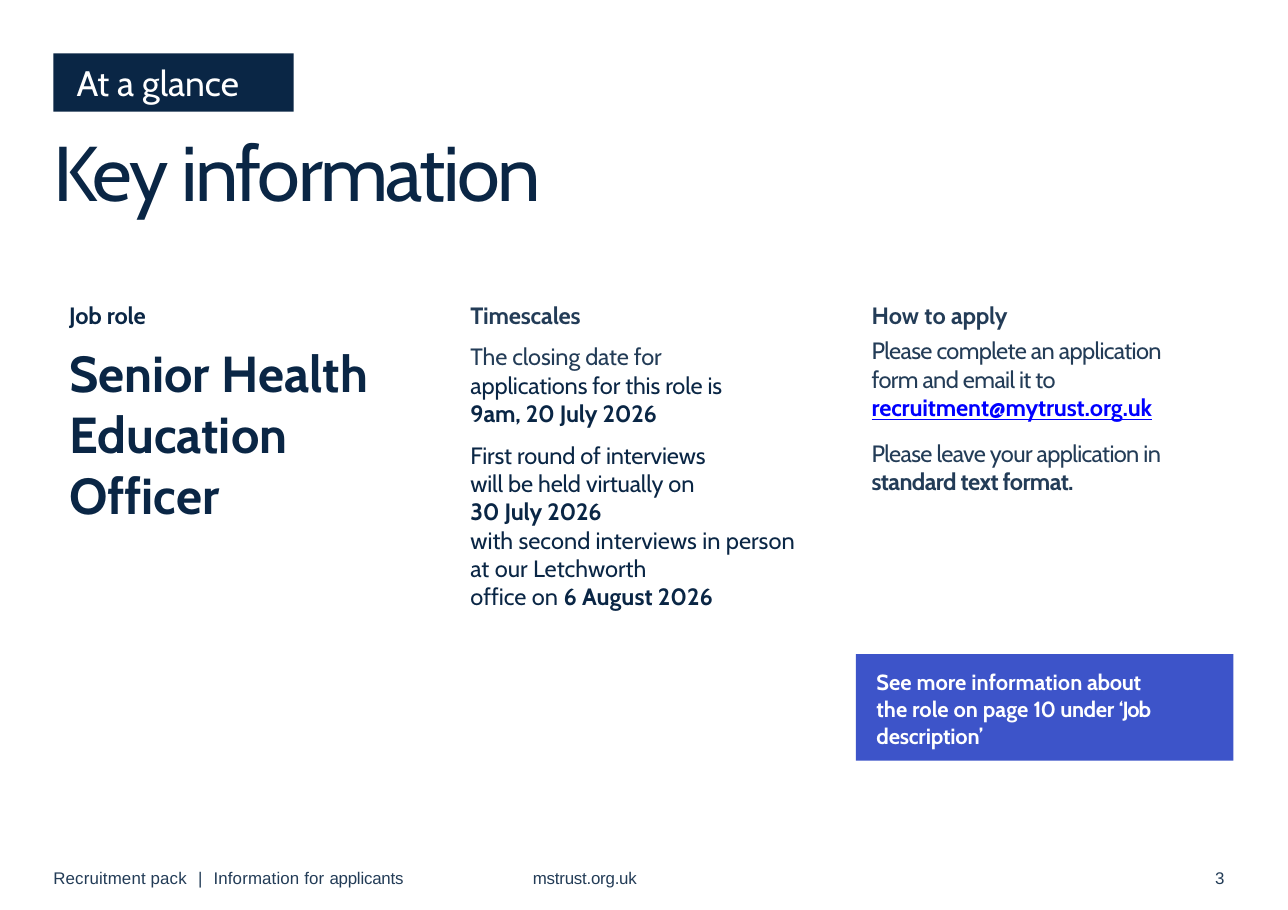
from copy import deepcopy

from pptx import Presentation
from pptx.dml.color import RGBColor
from pptx.enum.shapes import MSO_SHAPE
from pptx.enum.text import MSO_ANCHOR as ANCHOR, PP_ALIGN as ALIGN
from pptx.util import Inches, Pt

NAVY = RGBColor(0x0A, 0x26, 0x45)
SLATE = RGBColor(0x23, 0x3C, 0x57)
BLUE = RGBColor(0x3D, 0x54, 0xC9)
LINK = RGBColor(0x00, 0x00, 0xFF)
WHITE = RGBColor(0xFF, 0xFF, 0xFF)


def write(sp, paragraphs, insets=(0, 0, 0, 0), anchor=ANCHOR.TOP, font="Cabin"):
    """Fill a shape with (space before, line spacing, runs) paragraphs.

    A run is (text, size, colour, bold, character spacing in points).
    Insets run left, top, right, bottom in inches.
    """
    tf = sp.text_frame
    tf.word_wrap = True
    tf.vertical_anchor = anchor
    for side, inset in zip(("left", "top", "right", "bottom"), insets):
        setattr(tf, f"margin_{side}", Inches(inset))
    for n, (before, spacing, runs) in enumerate(paragraphs):
        p = tf.add_paragraph() if n else tf.paragraphs[0]
        p.alignment = ALIGN.LEFT
        p.space_before = Pt(before)
        p.line_spacing = spacing
        for text, size, color, bold, tracking in runs:
            for i, line in enumerate(text.split("\n")):
                if i:
                    p.add_line_break()
                    p._p[-1].append(deepcopy(r._r.rPr))
                r = p.add_run()
                r.text = line
                style = {"name": font, "size": Pt(size), "bold": bold, "underline": color == LINK}
                for key, value in style.items():
                    setattr(r.font, key, value)
                r.font.color.rgb = color
                r._r.get_or_add_rPr().set("spc", str(round(tracking * 100)))


def add_box(box, fill):
    sp = s.shapes.add_shape(MSO_SHAPE.RECTANGLE, *map(Inches, box))
    sp.shadow.inherit = False
    sp.fill.solid()
    sp.fill.fore_color.rgb = fill
    sp.line.fill.background()
    return sp


prs = Presentation()
prs.slide_width, prs.slide_height = Inches(10.61), Inches(7.5)
s = prs.slides.add_slide(prs.slide_layouts[5])

# Heading
label = add_box((0.44, 0.44, 1.98, 0.48), NAVY)
write(label, [(0, 1, [("At a glance", 21, WHITE, False, 0)])], (0.19, 0, 0, 0), ANCHOR.MIDDLE)

title = s.shapes.title
title.left, title.top, title.width, title.height = map(Inches, (0.44, 1.11, 5.83, 0.71))
write(title, [(0, 0.9, [("Key information", 46, NAVY, False, -1.5)])])

# Three columns
columns = [
    [
        (0, 1, [("Job role", 14, NAVY, True, -0.1)]),
        (7.8, 1, [("Senior Health Education Officer", 30, NAVY, True, 0)]),
    ],
    [
        (0, 1, [("Timescales", 14, SLATE, True, -0.1)]),
        (7.8, 1, [
            ("The closing date for\n", 14, SLATE, False, -0.1),
            ("applications for this role is\n", 14, NAVY, False, -0.1),
            ("9am, 20 July 2026", 14, NAVY, True, -0.1),
        ]),
        (7.8, 1, [
            ("First round of interviews\nwill be held virtually on\n", 14, NAVY, False, -0.1),
            ("30 July 2026\n", 14, NAVY, True, -0.1),
            ("with second interviews in person at our Letchworth\noffice on ", 14, NAVY, False, 0),
            ("6 August 2026", 14, NAVY, True, 0),
        ]),
    ],
    [
        (0, 1, [("How to ", 14, SLATE, True, 0), ("apply", 14, SLATE, True, -0.2)]),
        (4, 1.01, [
            ("Please complete an application form and email it to ", 14, SLATE, False, -0.4),
            ("recruitment@mytrust.org.uk", 14, LINK, True, -0.1),
        ]),
        (10, 1.01, [
            ("Please leave your application in ", 14, SLATE, False, -0.4),
            ("standard text format.", 14, SLATE, True, -0.4),
        ]),
    ],
]
COLUMN_LEFT, COLUMN_STEP, COLUMN_WIDTH = 0.44, 3.305, 3.11
for i, paragraphs in enumerate(columns):
    column = add_box((COLUMN_LEFT + i * COLUMN_STEP, 2.36, COLUMN_WIDTH, 2.82), WHITE)
    write(column, paragraphs, (0.13, 0.12, 0.25, 0.12))

# Callout under the last column
callout = add_box((COLUMN_LEFT + 2 * COLUMN_STEP, 5.39, COLUMN_WIDTH, 0.88), BLUE)
callout_runs = [
    ("See more information ", 0), ("about ", -0.2), ("the role on page ", 0), ("10 ", -0.4),
    ("under ", -0.2), ("‘Job ", -0.6), ("description’", -0.1),
]
write(callout, [(0, 1.03, [(text, 13, WHITE, True, gap) for text, gap in callout_runs])],
      (0.17, 0.11, 0.55, 0))

# Footer
footer = [
    (0.43, 3.05, [("Recruitment pack", 0.1), (" ", 3.7), ("|", 0.1), (" ", 3.7),
                  ("Information for ", 0.1), ("applicants", -0.1)]),
    (4.38, 0.96, [("mstrust.org.uk", -0.1)]),
    (10, 0.21, [("3", -0.2)]),
]
for left, width, runs in footer:
    box = s.shapes.add_textbox(*map(Inches, (left, 7.15, width, 0.21)))
    write(box, [(0, 1, [(text, 10, SLATE, False, gap) for text, gap in runs])],
          (0.01, 0, 0, 0), font="Arial")

prs.save("out.pptx")
